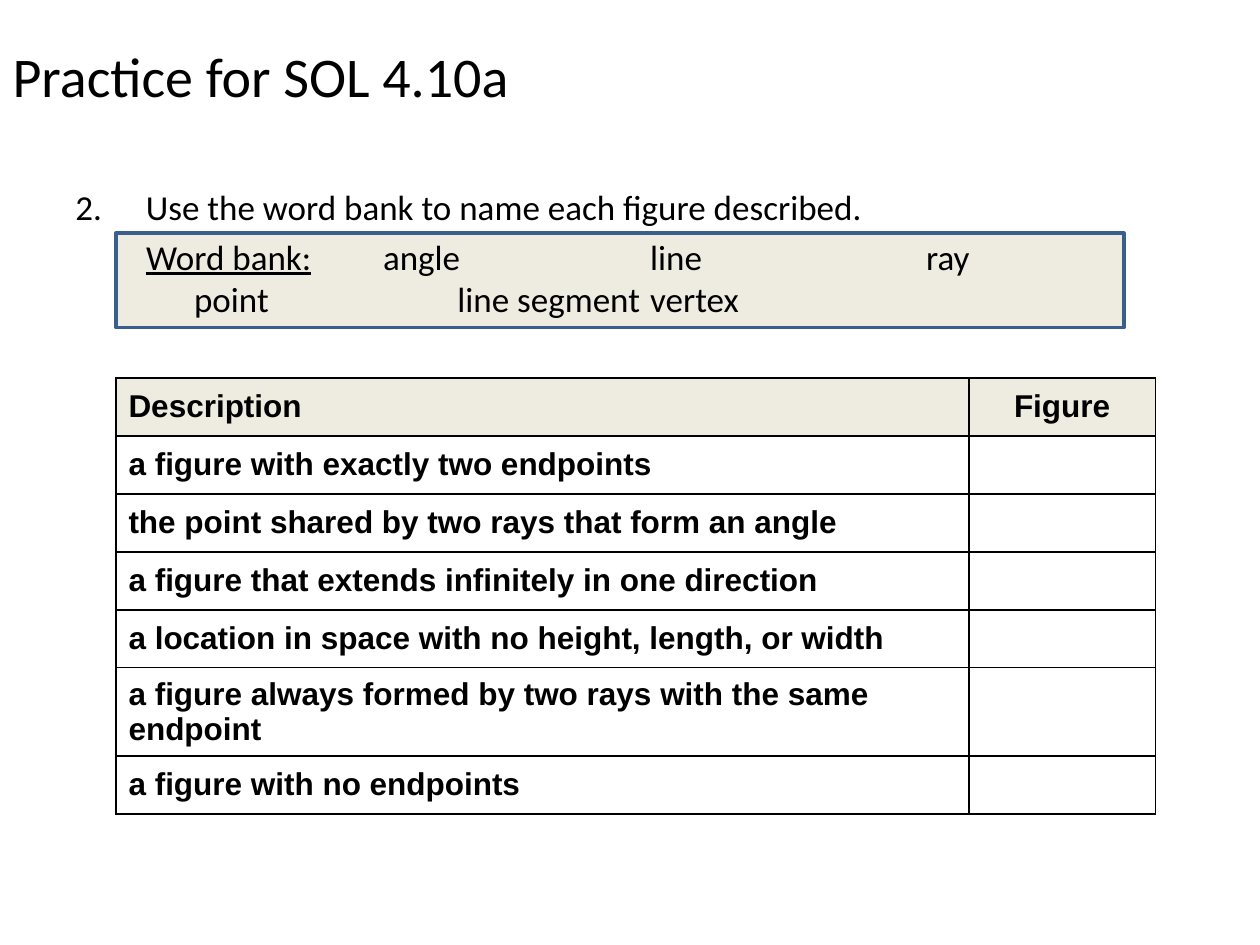
from lxml.etree import SubElement
from pptx import Presentation
from pptx.dml.color import RGBColor
from pptx.enum.shapes import MSO_SHAPE
from pptx.enum.text import MSO_ANCHOR, PP_ALIGN
from pptx.oxml.ns import qn
from pptx.util import Inches, Pt

COLORS = {"text": "000000", "panel": "EEECE1", "outline": "3A5F8C",
          "border": "000000", "page": "FFFFFF"}
TITLE = "Practice for SOL 4.10a"
QUESTION_NUMBER = 2
QUESTION = "Use the word bank to name each figure described."
BANK_LABEL = "Word bank:"
# Each line: text after the label, tab stops in inches
BANK_LINES = [
    (BANK_LABEL, ["angle", "line", "ray"], [1.88, 4.0, 6.19]),
    ("", ["point", "line segment", "vertex"], [0.38, 2.47, 4.0]),
]
HEADERS = ["Description", "Figure"]
DESCRIPTIONS = [
    "a figure with exactly two endpoints",
    "the point shared by two rays that form an angle",
    "a figure that extends infinitely in one direction",
    "a location in space with no height, length, or width",
    "a figure always formed by two rays with the same endpoint",
    "a figure with no endpoints",
]
COLUMN_WIDTHS = [6.77, 1.48]
ROW_HEIGHT = 0.46
LEFT = 0.92


def color(name):
    return RGBColor.from_string(COLORS[name])


def format_runs(para, font, size, bold=False):
    for run in para.runs:
        run.font.name = font
        run.font.size = Pt(size)
        run.font.bold = bold
        run.font.color.rgb = color("text")


def fill(target, name):
    target.fill.solid()
    target.fill.fore_color.rgb = color(name)


def add_title(slide):
    title = slide.shapes.title
    title.left, title.top = Inches(0), Inches(-0.03)
    title.width, title.height = Inches(9), Inches(1.25)
    frame = title.text_frame
    frame.text = TITLE
    frame.vertical_anchor = MSO_ANCHOR.MIDDLE
    para = frame.paragraphs[0]
    para.alignment = PP_ALIGN.LEFT
    format_runs(para, "Calibri", 32)


def add_question(slide):
    box = slide.shapes.add_textbox(Inches(0.5), Inches(1.42), Inches(9), Inches(0.43))
    box.text_frame.word_wrap = True
    para = box.text_frame.paragraphs[0]
    para.text = QUESTION
    format_runs(para, "Calibri", 20)
    props = para._p.get_or_add_pPr()
    props.set("marL", str(Inches(0.56)))
    props.set("indent", str(-Inches(0.56)))
    SubElement(props, qn("a:buFont"), typeface="Calibri")
    SubElement(props, qn("a:buAutoNum"), type="arabicPeriod", startAt=str(QUESTION_NUMBER))


def add_word_bank(slide):
    panel = slide.shapes.add_shape(
        MSO_SHAPE.RECTANGLE, Inches(LEFT), Inches(1.85), Inches(8), Inches(0.75))
    panel.shadow.inherit = False
    fill(panel, "panel")
    panel.line.color.rgb = color("outline")
    panel.line.width = Pt(2)
    frame = panel.text_frame
    frame.word_wrap = True
    frame.vertical_anchor = MSO_ANCHOR.MIDDLE
    frame.margin_left = Inches(0.24)
    frame.margin_bottom = Inches(0.1)
    for index, (label, words, stops) in enumerate(BANK_LINES):
        para = frame.paragraphs[0] if index == 0 else frame.add_paragraph()
        para.alignment = PP_ALIGN.LEFT
        if label:
            label_run = para.add_run()
            label_run.text = label
            label_run.font.underline = True
        para.add_run().text = "".join("\t" + word for word in words)
        format_runs(para, "Calibri", 20)
        tabs = SubElement(para._p.get_or_add_pPr(), qn("a:tabLst"))
        for stop in stops:
            SubElement(tabs, qn("a:tab"), pos=str(Inches(stop)), algn="l")


def add_borders(cell):
    props = cell._tc.get_or_add_tcPr()
    for index, side in enumerate(("a:lnL", "a:lnR", "a:lnT", "a:lnB")):
        line = SubElement(props, qn(side), w=str(Pt(1)))
        SubElement(SubElement(line, qn("a:solidFill")), qn("a:srgbClr"), val=COLORS["border"])
        props.insert(index, line)


def add_figure_table(slide):
    rows = [HEADERS] + [[description, ""] for description in DESCRIPTIONS]
    table = slide.shapes.add_table(
        len(rows), len(HEADERS), Inches(LEFT), Inches(3),
        Inches(sum(COLUMN_WIDTHS)), Inches(ROW_HEIGHT * len(rows))).table
    for column, width in zip(table.columns, COLUMN_WIDTHS):
        column.width = Inches(width)
    for row_index, row in enumerate(rows):
        table.rows[row_index].height = Inches(ROW_HEIGHT)
        for column_index, text in enumerate(row):
            cell = table.cell(row_index, column_index)
            cell.text = text
            cell.vertical_anchor = MSO_ANCHOR.MIDDLE
            fill(cell, "panel" if row_index == 0 else "page")
            add_borders(cell)
            para = cell.text_frame.paragraphs[0]
            para.alignment = PP_ALIGN.CENTER if column_index else PP_ALIGN.LEFT
            format_runs(para, "Arial", 18, bold=True)


def main():
    deck = Presentation()
    deck.slide_width, deck.slide_height = Inches(10), Inches(7.5)
    slide = deck.slides.add_slide(deck.slide_layouts[5])
    add_title(slide)
    add_question(slide)
    add_word_bank(slide)
    add_figure_table(slide)
    deck.save("out.pptx")


if __name__ == "__main__":
    main()
